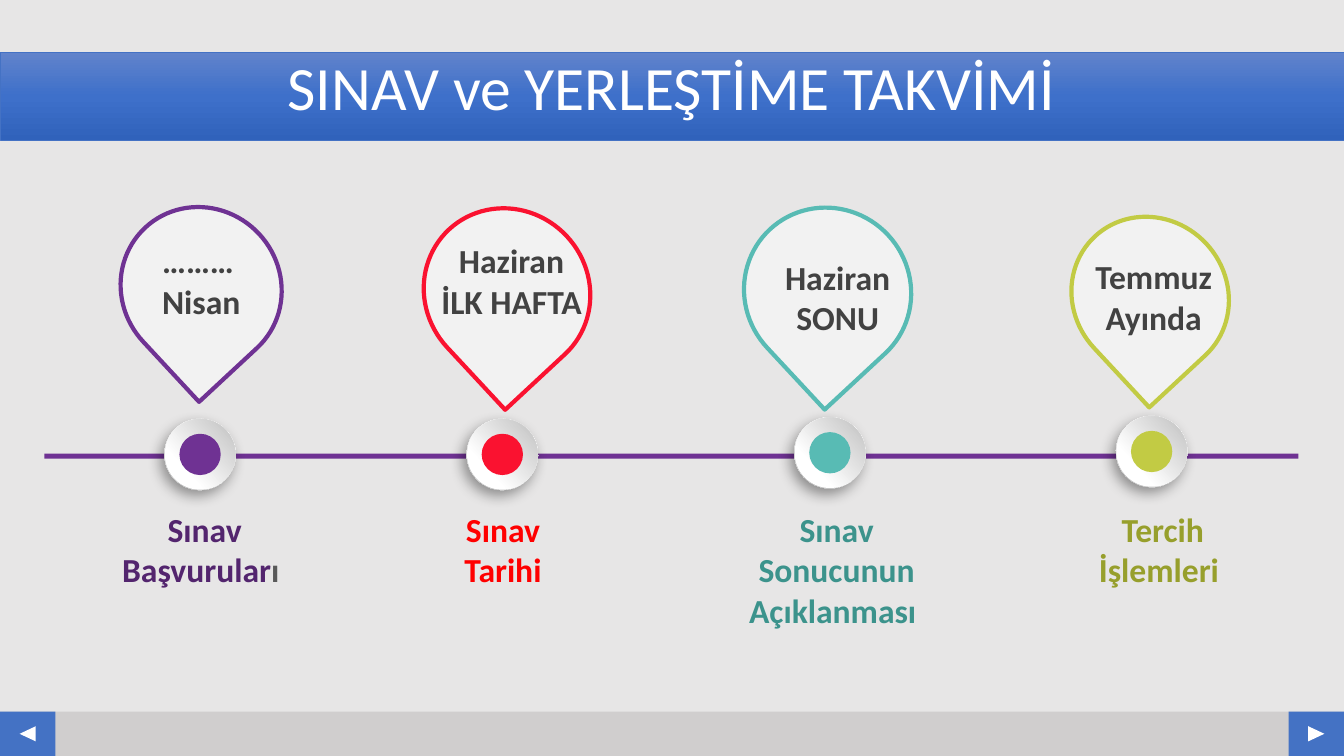
from dataclasses import dataclass
from typing import Any, Optional

import copy
import lxml.etree
import pptx
import pptx.dml.color
import pptx.enum.shapes
import pptx.enum.text
import pptx.oxml.ns
import pptx.util

RGB = pptx.dml.color.RGBColor
SHAPE = pptx.enum.shapes.MSO_SHAPE
ALIGN = pptx.enum.text.PP_ALIGN
ANCHOR = pptx.enum.text.MSO_ANCHOR
FIT = pptx.enum.text.MSO_AUTO_SIZE
qn = pptx.oxml.ns.qn

WHITE = RGB(0xFF, 0xFF, 0xFF)
BACKDROP = RGB(0xE7, 0xE6, 0xE6)
FOOTER_GREY = RGB(0xD0, 0xCE, 0xCE)
BLUE = RGB(0x44, 0x72, 0xC4)
BLUE_TOP = RGB(0x61, 0x83, 0xCB)
BLUE_MIDDLE = RGB(0x3E, 0x70, 0xCA)
BLUE_BOTTOM = RGB(0x30, 0x62, 0xBB)
RING_GREY = RGB(0xB8, 0xB8, 0xB8)
BEVEL_GREY = RGB(0xBF, 0xBF, 0xBF)
BUBBLE_GREY = RGB(0xF2, 0xF2, 0xF2)
DATE_GREY = RGB(0x42, 0x42, 0x42)
LETTER_GREY = RGB(0x59, 0x59, 0x59)
PURPLE = RGB(0x6F, 0x32, 0x93)
DARK_PURPLE = RGB(0x53, 0x25, 0x6E)
CRIMSON = RGB(0xFA, 0x12, 0x30)
RED = RGB(0xFF, 0x00, 0x00)
TEAL = RGB(0x58, 0xBB, 0xB4)
DARK_TEAL = RGB(0x3C, 0x93, 0x8C)
LIME = RGB(0xC2, 0xCB, 0x44)
OLIVE = RGB(0x97, 0x9F, 0x2C)

# Square grid cells: 160 columns by 90 rows
COLUMNS, ROWS = 160, 90
CELL = pptx.util.Inches(13.333) / COLUMNS

Stops = list[tuple[float, RGB]]
Box = tuple[float, float, float, float]
BOLD_24 = {"name": "Calibri", "size": pptx.util.Pt(24), "bold": True}


@dataclass
class Milestone:
    color: RGB
    node: tuple[float, float]  # centre on the axis
    bubble: Box
    date: list[str]
    date_box: Box
    date_align: Any
    caption: list[tuple[str, RGB]]
    caption_box: Box


MILESTONES = [
    Milestone(PURPLE, (23.82, 54.1), (14.52, 24.48, 18.84, 19.56),
              ["………", "Nisan"], (18.12, 28, 11.88, 10.9), ALIGN.LEFT,
              [("Sınav Başvurular", DARK_PURPLE), ("ı ", LETTER_GREY)],
              (12.96, 60, 22.8, 10.9)),
    Milestone(CRIMSON, (59.8, 54.1), (50.64, 24.6, 19.44, 20.28),
              ["Haziran", "İLK HAFTA"], (51.24, 28, 19.32, 10.9), ALIGN.CENTER,
              [("Sınav Tarihi", RED)], (49.8, 60, 20.16, 10.9)),
    Milestone(TEAL, (98.8, 53.9), (88.68, 24.6, 19.68, 20.16),
              ["Haziran", "SONU"], (92.16, 30, 15.12, 10.9), ALIGN.CENTER,
              [("Sınav Sonucunun Açıklanması ", DARK_TEAL)],
              (86.64, 60, 25.92, 15.7)),
    Milestone(LIME, (137.1, 53.75), (127.8, 25.56, 18.24, 19.32),
              ["Temmuz", "Ayında"], (129.12, 29.9, 16.44, 10.9), ALIGN.CENTER,
              [("Tercih İşlemleri ", OLIVE)], (129.12, 60, 18.6, 10.9)),
]


def cells(count: float) -> int:
    return round(count * CELL)


def apply(target: Any, values: dict[str, Any]) -> None:
    for attribute, value in values.items():
        setattr(target, attribute, value)


def around(centre: tuple[float, float], width: float, height: float) -> Box:
    return centre[0] - width / 2, centre[1] - height / 2, width, height


def draw(slide: Any, kind: Any, box: Box, fill: Optional[RGB] = None,
         line: Optional[RGB] = None, weight: float = 0, turn: float = 0) -> Any:
    shape = slide.shapes.add_shape(kind, *map(cells, box))
    shape.shadow.inherit = False
    shape.rotation = turn
    if fill is not None:
        shape.fill.solid()
        shape.fill.fore_color.rgb = fill
    if line is None:
        shape.line.fill.background()
    else:
        shape.line.color.rgb = line
        shape.line.width = pptx.util.Pt(weight)
    return shape


def shade(shape: Any, stops: Stops, clockwise: float) -> None:
    shape.fill.gradient()
    shape.fill.gradient_angle = -clockwise % 360
    stop_list = next(shape._element.iter(qn("a:gsLst")))
    while len(stop_list) < len(stops):
        stop_list.append(copy.deepcopy(stop_list[-1]))
    for stop, (position, color) in zip(shape.fill.gradient_stops, stops):
        stop.color.rgb = color
        stop.position = position


def cast_shadow(shape: Any) -> None:
    effects = next(shape._element.iter(qn("a:effectLst")))
    shadow = lxml.etree.SubElement(
        effects, qn("a:outerShdw"), blurRad=str(pptx.util.Pt(10)),
        dist=str(pptx.util.Pt(5)), dir=str(123 * 60000), rotWithShape="0")
    black = lxml.etree.SubElement(shadow, qn("a:srgbClr"), val="000000")
    lxml.etree.SubElement(black, qn("a:alpha"), val="39000")


def write(slide: Any, box: Box, paragraphs: list[list[tuple[str, RGB]]],
          align: Any, wrap: bool) -> None:
    frame = slide.shapes.add_textbox(*map(cells, box)).text_frame
    apply(frame, {"word_wrap": wrap, "auto_size": FIT.SHAPE_TO_FIT_TEXT})
    for index, runs in enumerate(paragraphs):
        paragraph = frame.add_paragraph() if index else frame.paragraphs[0]
        paragraph.alignment = align
        for text, color in runs:
            run = paragraph.add_run()
            run.text = text
            apply(run.font, BOLD_24)
            run.font.color.rgb = color


def draw_footer(slide: Any) -> None:
    top, height, button = 84.72, 5.28, 6.6
    draw(slide, SHAPE.RECTANGLE, (0, top, COLUMNS, height), FOOTER_GREY)
    for left, turn in ((0, 270), (COLUMNS - button, 90)):
        draw(slide, SHAPE.RECTANGLE, (left, top, button, height), BLUE)
        centre = (left + button / 2, top + height / 2)
        draw(slide, SHAPE.ISOSCELES_TRIANGLE, around(centre, 1.8, 1.92),
             WHITE, turn=turn)


def draw_title(slide: Any) -> None:
    band = draw(slide, SHAPE.RECTANGLE, (0, 6.24, COLUMNS, 10.44),
                line=BLUE, weight=0.5)
    shade(band, [(0, BLUE_TOP), (0.5, BLUE_MIDDLE), (1, BLUE_BOTTOM)], 90)
    apply(band.text_frame, {"vertical_anchor": ANCHOR.TOP, "word_wrap": True})
    heading = band.text_frame.paragraphs[0]
    apply(heading, {"alignment": ALIGN.CENTER, "line_spacing": 0.9})
    run = heading.add_run()
    run.text = "SINAV ve YERLEŞTİME TAKVİMİ"
    apply(run.font, {"name": "Calibri", "size": pptx.util.Pt(44)})
    run.font.color.rgb = WHITE


def draw_milestone(slide: Any, step: Milestone) -> None:
    # Node on the axis
    ring = draw(slide, SHAPE.OVAL, around(step.node, 8.5, 8.5), turn=62.3)
    shade(ring, [(0.17, WHITE), (0.88, RING_GREY)], 45)
    cast_shadow(ring)
    bevel = draw(slide, SHAPE.OVAL, around(step.node, 8.4, 8.4), turn=273)
    shade(bevel, [(0.29, WHITE), (0.98, BEVEL_GREY)], 45)
    draw(slide, SHAPE.OVAL, around(step.node, 4.92, 4.92), step.color)
    # Date bubble and caption
    draw(slide, SHAPE.TEAR, step.bubble, BUBBLE_GREY, step.color, 3, 137.1)
    write(slide, step.date_box, [[(text, DATE_GREY)] for text in step.date],
          step.date_align, wrap=False)
    write(slide, step.caption_box, [step.caption], ALIGN.CENTER, wrap=True)


def main() -> None:
    deck = pptx.Presentation()
    apply(deck, {"slide_width": cells(COLUMNS), "slide_height": cells(ROWS)})
    slide = deck.slides.add_slide(deck.slide_layouts[6])
    slide.background.fill.solid()
    slide.background.fill.fore_color.rgb = BACKDROP

    draw_footer(slide)
    draw_title(slide)
    # Time axis
    draw(slide, SHAPE.RECTANGLE, (5.28, 54, 149.28, 0.6), PURPLE)
    for step in MILESTONES:
        draw_milestone(slide, step)
    deck.save("out.pptx")


if __name__ == "__main__":
    main()
